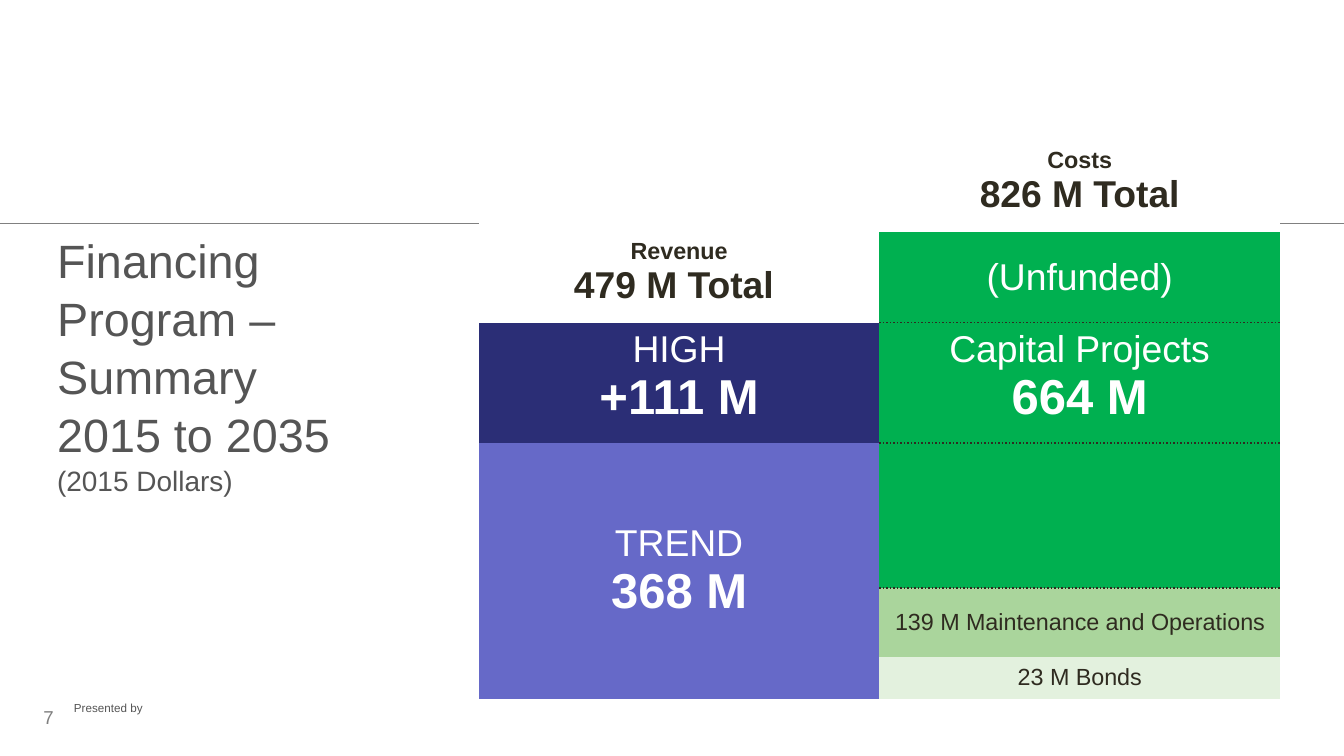
from lxml.etree import SubElement
from pptx import Presentation
from pptx.dml.color import RGBColor
from pptx.enum.shapes import MSO_CONNECTOR
from pptx.enum.text import MSO_ANCHOR, MSO_AUTO_SIZE, PP_ALIGN
from pptx.oxml import parse_xml
from pptx.oxml.ns import nsdecls, qn
from pptx.util import Inches, Pt

WHITE = RGBColor(0xFF, 0xFF, 0xFF)
INK = RGBColor(0x2F, 0x2B, 0x20)
TEXT = RGBColor(0x55, 0x55, 0x55)
GRAY = RGBColor(0x80, 0x80, 0x80)
PAGE = RGBColor(0x7F, 0x7F, 0x7F)
NAVY = RGBColor(0x2B, 0x2E, 0x76)
BLUE = RGBColor(0x66, 0x69, 0xC8)
GREEN = RGBColor(0x00, 0xB0, 0x50)
LIGHT = RGBColor(0xAA, 0xD5, 0x9C)
PALE = RGBColor(0xE3, 0xF1, 0xDE)

PLAIN = "{2D5ABB26-0587-4C30-8999-92F81FD0307C}"  # no style, no grid
TOP, MID = MSO_ANCHOR.TOP, MSO_ANCHOR.MIDDLE


class Deck:
    font = "Arial"

    def __init__(self, width, height):
        self.file = Presentation()
        self.file.slide_width = Inches(width)
        self.file.slide_height = Inches(height)
        self.slide = self.file.slides.add_slide(self.file.slide_layouts[5])

    def style(self, run, size, color, bold=False):
        font = run.font
        font.name, font.size, font.bold = self.font, Pt(size), bold
        font.color.rgb = color

    def place(self, shape, box):
        shape.left, shape.top, shape.width, shape.height = map(Inches, box)

    def inset(self, frame):
        frame.margin_left = frame.margin_right = Inches(0.07)
        frame.margin_top = frame.margin_bottom = Inches(0.04)

    def rule(self, y):
        line = self.slide.shapes.add_connector(
            MSO_CONNECTOR.STRAIGHT, 0, Inches(y), self.file.slide_width, Inches(y))
        line.line.color.rgb = GRAY
        line.line.width = Pt(0.75)
        SubElement(line._element.spPr, qn("a:effectLst"))

    def title(self, text, box, sizes):
        shape = self.slide.shapes.title
        self.place(shape, box)
        frame = shape.text_frame
        frame.text = text
        frame.word_wrap, frame.auto_size = True, MSO_AUTO_SIZE.NONE
        frame.vertical_anchor = MSO_ANCHOR.BOTTOM
        self.inset(frame)
        para = frame.paragraphs[0]
        para.alignment, para.line_spacing = PP_ALIGN.LEFT, 1.04
        for run, size in zip(para.runs, sizes):
            self.style(run, size, TEXT)
        # Line breaks carry their own text size
        for mark, size in zip(para._p.findall(qn("a:br")), sizes):
            SubElement(mark, qn("a:rPr")).set("sz", str(size * 100))

    def label(self, text, box, size, color):
        shape = self.slide.shapes.add_textbox(*map(Inches, box))
        frame = shape.text_frame
        frame.text, frame.word_wrap = text, True
        self.style(frame.paragraphs[0].runs[0], size, color)
        return frame

    def table(self, box, rows):
        shape = self.slide.shapes.add_table(len(rows), 2, *map(Inches, box))
        grid = shape.table
        grid.first_row = grid.horz_banding = False
        grid._tbl.tblPr.find(qn("a:tableStyleId")).text = PLAIN
        for row, height in zip(grid.rows, rows):
            row.height = Inches(height)
        return grid

    def dots(self, cell, sides):
        props = cell._tc.get_or_add_tcPr()
        for side in sides:
            props.insert(0, parse_xml(
                f'<a:ln{side} {nsdecls("a")} w="12700"><a:solidFill>'
                f'<a:srgbClr val="{INK}"/></a:solidFill>'
                f'<a:prstDash val="sysDot"/></a:ln{side}>'))

    def cell(self, cell, fill, lines=(), color=INK, anchor=TOP, dots=""):
        cell.margin_left = cell.margin_right = Inches(0.09)
        cell.margin_top = cell.margin_bottom = Inches(0.04)
        cell.vertical_anchor = anchor
        cell.fill.solid()
        cell.fill.fore_color.rgb = fill
        self.dots(cell, dots)
        if not lines:
            return
        cell.text_frame.text = "\n".join(line[0] for line in lines)
        for para, (_, size, bold) in zip(cell.text_frame.paragraphs, lines):
            para.alignment = PP_ALIGN.CENTER
            self.style(para.runs[0], size, color, bold)


def head(name, total):
    return [(name, 10, True), (total, 16, True)]


def block(name, value):
    return [(name, 16, False), (value, 21, True)]


def main():
    deck = Deck(8, 4.5)

    # Footer and rule
    foot = deck.label("Presented by", (0.37, 4.17, 0.56, 0.11), 5, TEXT)
    deck.inset(foot)
    foot.vertical_anchor = MID
    foot.paragraphs[0].line_spacing = 0.7
    deck.rule(1.33)

    # Stacked columns of revenue and costs
    grid = deck.table((2.85, 0.84, 4.77, 3.32),
                      (0.54, 0.54, 0.72, 0.86, 0.41, 0.25))
    for row in (4, 5):
        para = grid.cell(row, 0).text_frame.paragraphs[0]
        para._p.get_or_add_endParaRPr().set("sz", "1000")
    grid.cell(3, 0).merge(grid.cell(5, 0))

    # Revenue
    deck.cell(grid.cell(0, 0), WHITE)
    deck.cell(grid.cell(1, 0), WHITE, head("Revenue", "479 M Total "))
    deck.cell(grid.cell(2, 0), NAVY, block("HIGH", "+111 M"), WHITE)
    deck.cell(grid.cell(3, 0), BLUE, block("TREND", "368 M"), WHITE, MID)

    # Costs
    deck.cell(grid.cell(0, 1), WHITE, head("Costs", "826 M Total"))
    deck.cell(grid.cell(1, 1), GREEN, [("(Unfunded)", 16, False)], WHITE, MID, "B")
    deck.cell(grid.cell(2, 1), GREEN, block("Capital Projects", "664 M"),
              WHITE, dots="BT")
    deck.cell(grid.cell(3, 1), GREEN, dots="T")
    deck.cell(grid.cell(4, 1), LIGHT,
              [("139 M Maintenance and Operations", 10, False)], anchor=MID)
    deck.cell(grid.cell(5, 1), PALE, [("23 M Bonds", 10, False)], anchor=MID)

    # Title and page number
    deck.title("Financing Program – Summary \v2015 to 2035\v(2015 Dollars)",
               (0.27, 1.77, 1.78, 1.23), (20, 20, 12))
    page = deck.label("7", (0.06, 4.15, 0.46, 0.31), 8, PAGE)
    page.paragraphs[0].alignment = PP_ALIGN.CENTER

    deck.file.save("out.pptx")


if __name__ == "__main__":
    main()
